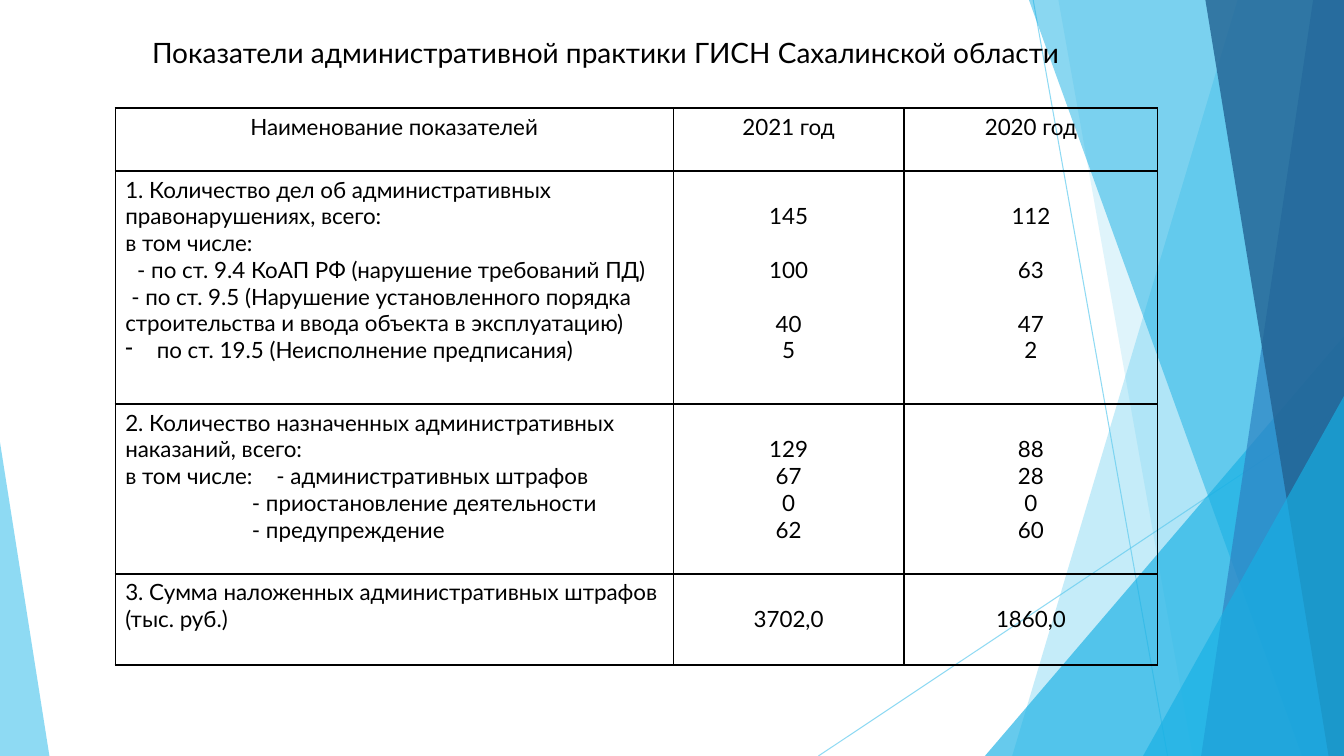
from lxml import etree
from pptx import Presentation
from pptx.dml.color import RGBColor
from pptx.enum import shapes, text
from pptx.oxml import ns
from pptx.util import Pt

COLORS = {"sky": "5FCBEF", "cyan": "17B0E4", "blue": "2E83C3", "navy": "226292", "ink": "000000"}
FONT = "Lato"
WIDTH, HEIGHT = 960, 540
LINE_HEIGHT = 19.2
MARGIN = 3.6
COLUMNS = (398.6, 164.9, 181.3)
ROWS = (45, 166.4, 121.4, 65)
HEADINGS = ("Наименование показателей", "2021 год", "2020 год")

# fields: label, left indent, first-line indent, tab stop, bullet
INDICATORS = (
    (("1. Количество дел об административных правонарушениях, всего:", {}),
     ("в том числе:", {}),
     ("- по ст. 9.4 КоАП РФ (нарушение требований ПД)", {"indent": 8.5}),
     ("- по ст. 9.5 (Нарушение установленного порядка строительства и ввода объекта "
      "в эксплуатацию)", {"first": 4.3}),
     ("по ст. 19.5 (Неисполнение предписания)", {"indent": 22.5, "first": -22.5, "bullet": "-"})),
    (("2. Количество назначенных административных наказаний, всего:", {}),
     ("в том числе:\t- административных штрафов", {"tab": 103.5}),
     ("- приостановление деятельности", {"indent": 90.5}),
     ("- предупреждение", {"indent": 90.5})),
    (("3. Сумма наложенных административных штрафов (тыс. руб.)", {}),),
)
VALUES = (
    (("145", "100", "40", "5"), ("112", "63", "47", "2")),
    (("129", "67", "0", "62"), ("88", "28", "0", "60")),
    (("3702,0",), ("1860,0",)),
)
SKIPPED_LINES = ((1, 1, 1, 0), (1, 0, 0, 0), (1,))


def rgb(name):
    return RGBColor.from_string(COLORS[name])


def set_opacity(element, percent):
    for color in element.iter(ns.qn("a:srgbClr")):
        etree.SubElement(color, ns.qn("a:alpha")).set("val", str(percent * 1000))


def paint(shape, color, opacity):
    shape.shadow.inherit = False
    shape.fill.solid()
    shape.fill.fore_color.rgb = rgb(color)
    shape.line.fill.background()
    set_opacity(shape._element.spPr, opacity)


def add_ray(slide, start, end):
    ray = slide.shapes.add_connector(
        shapes.MSO_CONNECTOR.STRAIGHT, *(Pt(value) for value in start + end))
    ray.line.color.rgb = rgb("sky")
    ray.line.width = Pt(0.75)
    set_opacity(ray._element.spPr, 70)
    etree.SubElement(ray._element.spPr, ns.qn("a:effectLst"))


def add_facet(slide, top, bottom, color, opacity):
    outline = slide.shapes.build_freeform(top, 0, scale=Pt(1))
    outline.add_line_segments([(WIDTH, 0), (WIDTH, HEIGHT), (bottom, HEIGHT)], close=True)
    paint(outline.convert_to_shape(), color, opacity)


def add_corner(slide, left, top, width, apex, color, opacity):
    corner = slide.shapes.add_shape(
        shapes.MSO_SHAPE.ISOSCELES_TRIANGLE, Pt(left), Pt(top), Pt(width), Pt(HEIGHT - top))
    corner.adjustments[0] = apex
    paint(corner, color, opacity)


def add_background(slide):
    add_ray(slide, (738, 0), (834, HEIGHT))
    add_ray(slide, (WIDTH, 290), (584.6, HEIGHT))
    add_facet(slide, 884, 723, "sky", 36)
    add_facet(slide, 756, 852, "sky", 20)
    add_corner(slide, 703.5, 240, 256.5, 1, "cyan", 66)
    add_facet(slide, 735, 930, "cyan", 50)
    add_facet(slide, 938, 858, "blue", 70)
    add_facet(slide, 861, 949, "navy", 80)
    add_corner(slide, 816.5, 283, 143.5, 1, "cyan", 66)
    add_corner(slide, 0, 316, 35.3, 0, "sky", 70)


def add_run(paragraph, words, size):
    run = paragraph.add_run()
    run.text = words
    run.font.size = Pt(size)
    run.font.name = FONT
    run.font.color.rgb = rgb("ink")


def add_title(slide):
    title = slide.shapes.add_textbox(Pt(101.5), Pt(21.6), Pt(702), Pt(49.7))
    title.text_frame.word_wrap = True
    add_run(title.text_frame.paragraphs[0],
            "Показатели административной практики ГИСН Сахалинской области", 20)


def next_paragraph(frame, index):
    return frame.add_paragraph() if index else frame.paragraphs[0]


def format_label(paragraph, indent=0, first=0, tab=None, bullet=None):
    properties = paragraph._p.get_or_add_pPr()
    properties.set("marL", str(Pt(indent)))
    properties.set("indent", str(Pt(first)))
    if bullet:
        etree.SubElement(properties, ns.qn("a:buChar")).set("char", bullet)
    if tab:
        stops = etree.SubElement(properties, ns.qn("a:tabLst"))
        etree.SubElement(stops, ns.qn("a:tab"), pos=str(Pt(tab)), algn="l")


def write_labels(cell, labels):
    for index, (words, layout) in enumerate(labels):
        paragraph = next_paragraph(cell.text_frame, index)
        format_label(paragraph, **layout)
        add_run(paragraph, words, 16)


def write_centred(cell, values, skipped):
    cell.margin_top = Pt(MARGIN + skipped[0] * LINE_HEIGHT)
    for index, (value, gap) in enumerate(zip(values, skipped)):
        paragraph = next_paragraph(cell.text_frame, index)
        paragraph.alignment = text.PP_ALIGN.CENTER
        if index and gap:
            paragraph.space_before = Pt(gap * LINE_HEIGHT)
        add_run(paragraph, value, 16)


def frame_cell(cell):
    cell.fill.background()
    properties = cell._tc.get_or_add_tcPr()
    for position, side in enumerate(("lnL", "lnR", "lnT", "lnB")):
        border = etree.Element(ns.qn("a:" + side), w=str(Pt(1)))
        fill = etree.SubElement(border, ns.qn("a:solidFill"))
        etree.SubElement(fill, ns.qn("a:srgbClr"), val=COLORS["ink"])
        properties.insert(position, border)


def add_indicators(slide):
    table = slide.shapes.add_table(
        len(ROWS), len(COLUMNS), Pt(82.3), Pt(77.2), Pt(sum(COLUMNS)), Pt(sum(ROWS))).table
    table.first_row = table.horz_banding = False
    for column, width in zip(table.columns, COLUMNS):
        column.width = Pt(width)
    for row, height in zip(table.rows, ROWS):
        row.height = Pt(height)
    for cell in table.iter_cells():
        frame_cell(cell)
    for column, heading in enumerate(HEADINGS):
        write_centred(table.cell(0, column), (heading,), (0,))
    for row, (labels, years, skipped) in enumerate(zip(INDICATORS, VALUES, SKIPPED_LINES), 1):
        write_labels(table.cell(row, 0), labels)
        for column, values in enumerate(years, 1):
            write_centred(table.cell(row, column), values, skipped)


def main():
    deck = Presentation()
    deck.slide_width, deck.slide_height = Pt(WIDTH), Pt(HEIGHT)
    slide = deck.slides.add_slide(deck.slide_layouts[6])
    add_background(slide)
    add_title(slide)
    add_indicators(slide)
    deck.save("out.pptx")


if __name__ == "__main__":
    main()
